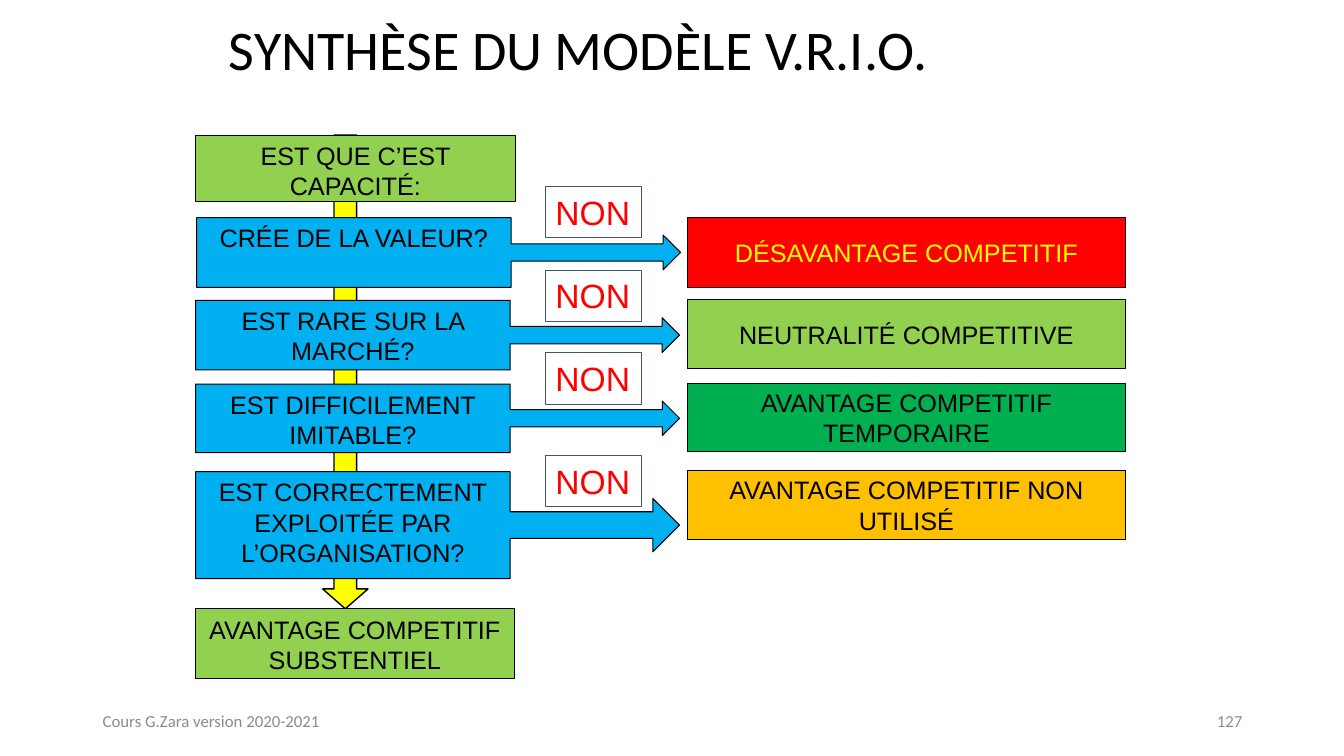
from dataclasses import dataclass
from typing import Optional

from pptx import Presentation
from pptx.dml.color import RGBColor
from pptx.enum.shapes import MSO_SHAPE as Preset
from pptx.enum.text import MSO_ANCHOR as Anchor, MSO_AUTO_SIZE as AutoSize, PP_ALIGN as Align
from pptx.shapes.autoshape import Shape
from pptx.slide import Slide
from pptx.text.text import TextFrame
from pptx.util import Inches, Pt


@dataclass(frozen=True)
class Theme:
    black: str = "000000"
    yellow: str = "FFFF00"
    blue: str = "00B0F0"
    lime: str = "92D050"
    green: str = "00B050"
    red: str = "FF0000"
    amber: str = "FFC000"
    slate: str = "44546A"
    grey: str = "8C8C8C"
    body_font: str = "Arial"
    heading_font: str = "Calibri"
    title_size: float = 40
    answer_size: float = 24
    box_size: float = 18
    footer_size: float = 12


THEME = Theme()


@dataclass(frozen=True)
class Box:
    left: float
    top: float
    width: float
    height: float


@dataclass(frozen=True)
class Step:
    question: str
    question_box: Box
    answer_top: float
    outcome: str
    outcome_box: Box
    outcome_fill: str
    outcome_color: str = THEME.black


@dataclass(frozen=True)
class Milestone:
    text: str
    box: Box


@dataclass(frozen=True)
class FooterItem:
    text: str
    left: float
    align: Align


STEPS = (
    Step("CRÉE DE LA VALEUR?", Box(1.95, 2.16, 4.8, 0.69), 1.85,
         "DÉSAVANTAGE COMPETITIF", Box(6.82, 2.16, 4.34, 0.69), THEME.red, THEME.yellow),
    Step("EST RARE SUR LA MARCHÉ?", Box(1.94, 2.98, 4.8, 0.69), 2.68,
         "NEUTRALITÉ COMPETITIVE", Box(6.82, 2.97, 4.34, 0.69), THEME.lime),
    Step("EST DIFFICILEMENT IMITABLE?", Box(1.94, 3.81, 4.8, 0.68), 3.5,
         "AVANTAGE COMPETITIF TEMPORAIRE", Box(6.82, 3.8, 4.34, 0.68), THEME.green),
    Step("EST CORRECTEMENT EXPLOITÉE PAR L’ORGANISATION?", Box(1.94, 4.68, 4.8, 1.06), 4.52,
         "AVANTAGE COMPETITIF NON UTILISÉ", Box(6.82, 4.67, 4.34, 0.68), THEME.amber),
)
MILESTONES = (
    Milestone("EST QUE C’EST CAPACITÉ:", Box(1.94, 1.34, 3.17, 0.66)),
    Milestone("AVANTAGE COMPETITIF SUBSTENTIEL", Box(1.94, 6.04, 3.16, 0.69)),
)
FOOTER = (
    FooterItem("Cours G.Zara version 2020-2021", 0.92, Align.LEFT),
    FooterItem("127", 9.42, Align.RIGHT),
)


def lengths(box: Box) -> tuple:
    return Inches(box.left), Inches(box.top), Inches(box.width), Inches(box.height)


def write(frame: TextFrame, text: str, size: float, font: str = THEME.body_font,
          color: str = THEME.black, align: Align = Align.CENTER,
          anchor: Anchor = Anchor.MIDDLE, wrap: bool = True) -> None:
    frame.word_wrap = wrap
    frame.vertical_anchor = anchor
    paragraph = frame.paragraphs[0]
    paragraph.alignment = align
    run = paragraph.add_run()
    run.text = text
    run.font.size = Pt(size)
    run.font.name = font
    run.font.color.rgb = RGBColor.from_string(color)


def draw(slide: Slide, preset: Preset, box: Box, fill: Optional[str],
         line: str = THEME.black, line_width: float = 0.75,
         adjustments: tuple = ()) -> Shape:
    shape = slide.shapes.add_shape(preset, *lengths(box))
    shape.shadow.inherit = False
    if fill:
        shape.fill.solid()
        shape.fill.fore_color.rgb = RGBColor.from_string(fill)
    else:
        shape.fill.background()
    shape.line.color.rgb = RGBColor.from_string(line)
    shape.line.width = Pt(line_width)
    for index, value in enumerate(adjustments):
        shape.adjustments[index] = value
    return shape


def add_title(slide: Slide) -> None:
    title = slide.shapes.title
    title.left, title.top, title.width, title.height = lengths(Box(2.17, -0.11, 9, 1.25))
    write(title.text_frame, "SYNTHÈSE DU MODÈLE V.R.I.O.", THEME.title_size,
          THEME.heading_font, align=Align.LEFT)
    title.text_frame.auto_size = AutoSize.NONE
    title.text_frame.paragraphs[0].line_spacing = 0.9


def add_step(slide: Slide, step: Step) -> None:
    question = draw(slide, Preset.RIGHT_ARROW_CALLOUT, step.question_box, THEME.blue,
                    adjustments=(0.25, 0.25, 0.25, 0.65))
    write(question.text_frame, step.question, THEME.box_size, anchor=Anchor.TOP)
    outcome = draw(slide, Preset.RECTANGLE, step.outcome_box, step.outcome_fill)
    write(outcome.text_frame, step.outcome, THEME.box_size, color=step.outcome_color)


def add_answer(slide: Slide, top: float) -> None:
    answer = draw(slide, Preset.RECTANGLE, Box(5.41, top, 0.95, 0.51), None, THEME.slate)
    write(answer.text_frame, "NON", THEME.answer_size, color=THEME.red,
          align=Align.LEFT, anchor=Anchor.TOP, wrap=False)
    answer.text_frame.auto_size = AutoSize.SHAPE_TO_FIT_TEXT


def add_milestone(slide: Slide, milestone: Milestone) -> None:
    shape = draw(slide, Preset.RECTANGLE, milestone.box, THEME.lime)
    write(shape.text_frame, milestone.text, THEME.box_size, anchor=Anchor.TOP)


def add_footer_item(slide: Slide, item: FooterItem) -> None:
    footer = slide.shapes.add_textbox(*lengths(Box(item.left, 6.95, 3, 0.4)))
    write(footer.text_frame, item.text, THEME.footer_size, THEME.heading_font,
          THEME.grey, item.align)


def main() -> None:
    deck = Presentation()
    deck.slide_width, deck.slide_height = Inches(13.33), Inches(7.5)
    slide = deck.slides.add_slide(deck.slide_layouts.get_by_name("Title Only"))
    add_title(slide)

    # Downward path behind the questions
    draw(slide, Preset.DOWN_ARROW, Box(3.2, 1.34, 0.45, 4.7), THEME.yellow,
         line_width=1, adjustments=(0.5, 0.438))

    # Questions with their outcomes, then start and end of the path
    for step in STEPS:
        add_step(slide, step)
    for milestone in MILESTONES:
        add_milestone(slide, milestone)

    # Negative answers above the arrows
    for step in STEPS:
        add_answer(slide, step.answer_top)

    # Footer
    for item in FOOTER:
        add_footer_item(slide, item)
    deck.save("out.pptx")


if __name__ == "__main__":
    main()
